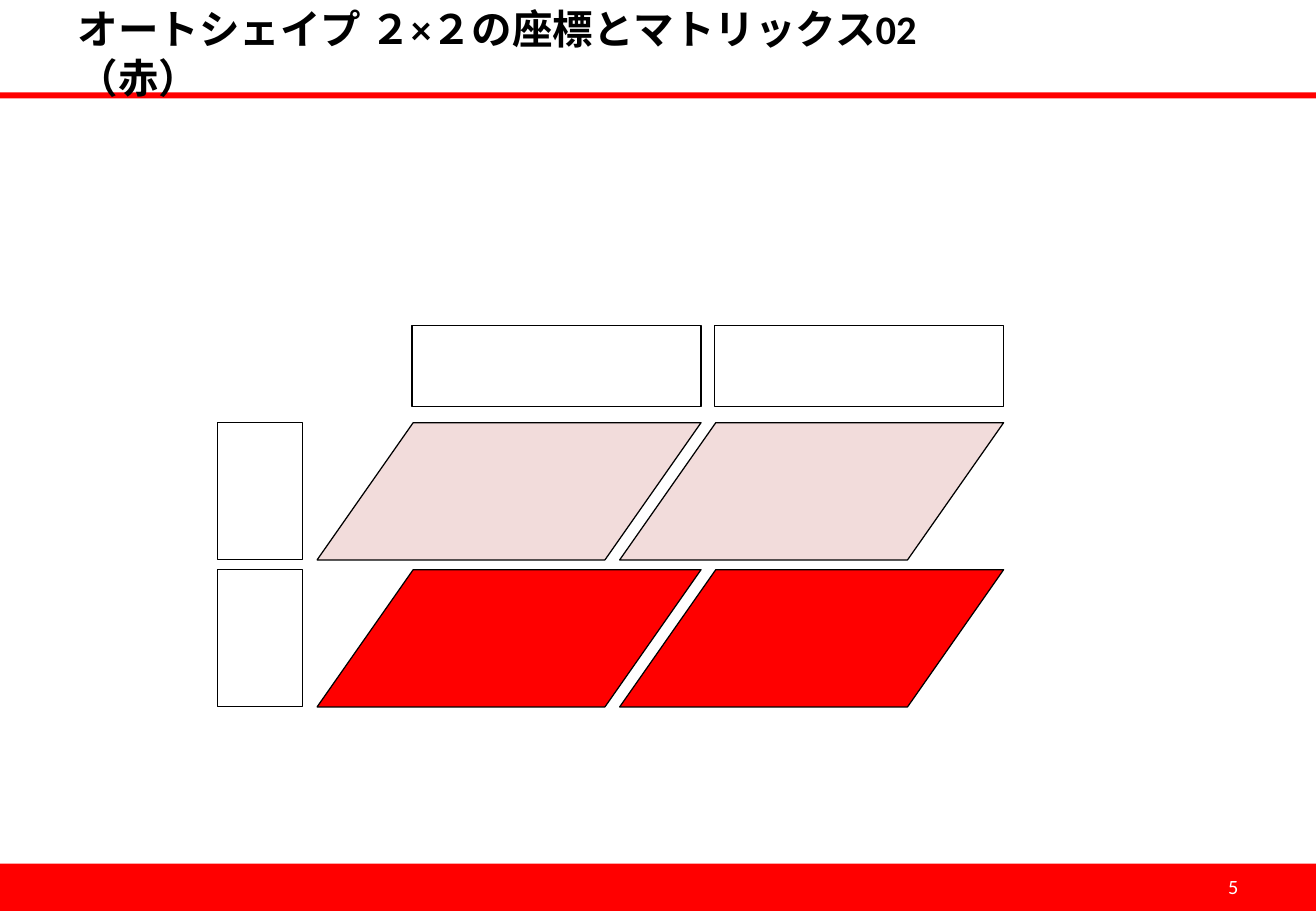
from dataclasses import dataclass

from pptx import Presentation
from pptx.dml.color import RGBColor
from pptx.enum.shapes import MSO_SHAPE
from pptx.enum.text import MSO_ANCHOR, MSO_AUTO_SIZE, PP_ALIGN
from pptx.util import Inches, Pt


@dataclass(frozen=True)
class Theme:
    red: RGBColor = RGBColor(0xFF, 0x00, 0x00)
    pink: RGBColor = RGBColor(0xF2, 0xDC, 0xDB)
    white: RGBColor = RGBColor(0xFF, 0xFF, 0xFF)
    black: RGBColor = RGBColor(0x00, 0x00, 0x00)
    font: str = "Calibri"
    title_size: int = 24
    number_size: int = 12
    outline: float = 0.75


theme = Theme()
WIDTH, HEIGHT = 10.83, 7.5

presentation = Presentation()
presentation.slide_width = Inches(WIDTH)
presentation.slide_height = Inches(HEIGHT)
slide = presentation.slides.add_slide(presentation.slide_layouts[5])


def add_block(kind, left, top, width, height, fill, outlined=True):
    shape = slide.shapes.add_shape(
        kind, Inches(left), Inches(top), Inches(width), Inches(height))
    shape.shadow.inherit = False
    shape.fill.solid()
    shape.fill.fore_color.rgb = fill
    if outlined:
        shape.line.color.rgb = theme.black
        shape.line.width = Pt(theme.outline)
    else:
        shape.line.fill.background()
    return shape


def write_text(shape, text, size, color, bold, alignment):
    frame = shape.text_frame
    frame.text = text
    frame_format = {"word_wrap": True, "auto_size": MSO_AUTO_SIZE.NONE,
                    "vertical_anchor": MSO_ANCHOR.MIDDLE}
    for name, value in frame_format.items():
        setattr(frame, name, value)
    paragraph = frame.paragraphs[0]
    paragraph.alignment = alignment
    font = paragraph.runs[0].font
    for name, value in {"name": theme.font, "size": Pt(size), "bold": bold}.items():
        setattr(font, name, value)
    font.color.rgb = color


# Footer band and title rule
for top, height in ((7.11, 0.39), (0.76, 0.05)):
    add_block(MSO_SHAPE.RECTANGLE, 0, top, WIDTH, height, theme.red, outlined=False)

# Title, brought in front of the rule
title = slide.shapes.title
title_box = {"left": 0.54, "top": 0.16, "width": 7.84, "height": 0.55}
for name, value in title_box.items():
    setattr(title, name, Inches(value))
write_text(title, "オートシェイプ ２×２の座標とマトリックス02（赤）",
           theme.title_size, theme.black, True, PP_ALIGN.LEFT)
title.element.getparent().append(title.element)

# Page number
page_number = slide.shapes.add_textbox(
    Inches(7.76), Inches(7.1), Inches(2.53), Inches(0.4))
write_text(page_number, "5", theme.number_size, theme.white, False, PP_ALIGN.RIGHT)

# Matrix grid: slanted cells share their right edge with the column headers
CELL_LEFT, CELL_TOP = 2.61, 3.48
CELL_WIDTH, CELL_HEIGHT = 3.16, 1.13
COLUMN_STEP, ROW_STEP = 2.49, 1.21
SLANT = 0.7
HEADER_TOP, HEADER_WIDTH, HEADER_HEIGHT = 2.68, 2.38, 0.67
LABEL_LEFT, LABEL_WIDTH = 1.79, 0.7
column_lefts = [CELL_LEFT + column * COLUMN_STEP for column in range(2)]
row_tops = [CELL_TOP + row * ROW_STEP for row in range(2)]

# Slanted cells
for top, fill in zip(row_tops, (theme.pink, theme.red)):
    for left in column_lefts:
        cell = add_block(MSO_SHAPE.PARALLELOGRAM, left, top,
                         CELL_WIDTH, CELL_HEIGHT, fill)
        cell.adjustments[0] = SLANT

# Column headers
for left in column_lefts:
    add_block(MSO_SHAPE.RECTANGLE, left + CELL_WIDTH - HEADER_WIDTH, HEADER_TOP,
              HEADER_WIDTH, HEADER_HEIGHT, theme.white)

# Row labels
for top in row_tops:
    add_block(MSO_SHAPE.RECTANGLE, LABEL_LEFT, top,
              LABEL_WIDTH, CELL_HEIGHT, theme.white)

presentation.save("out.pptx")
